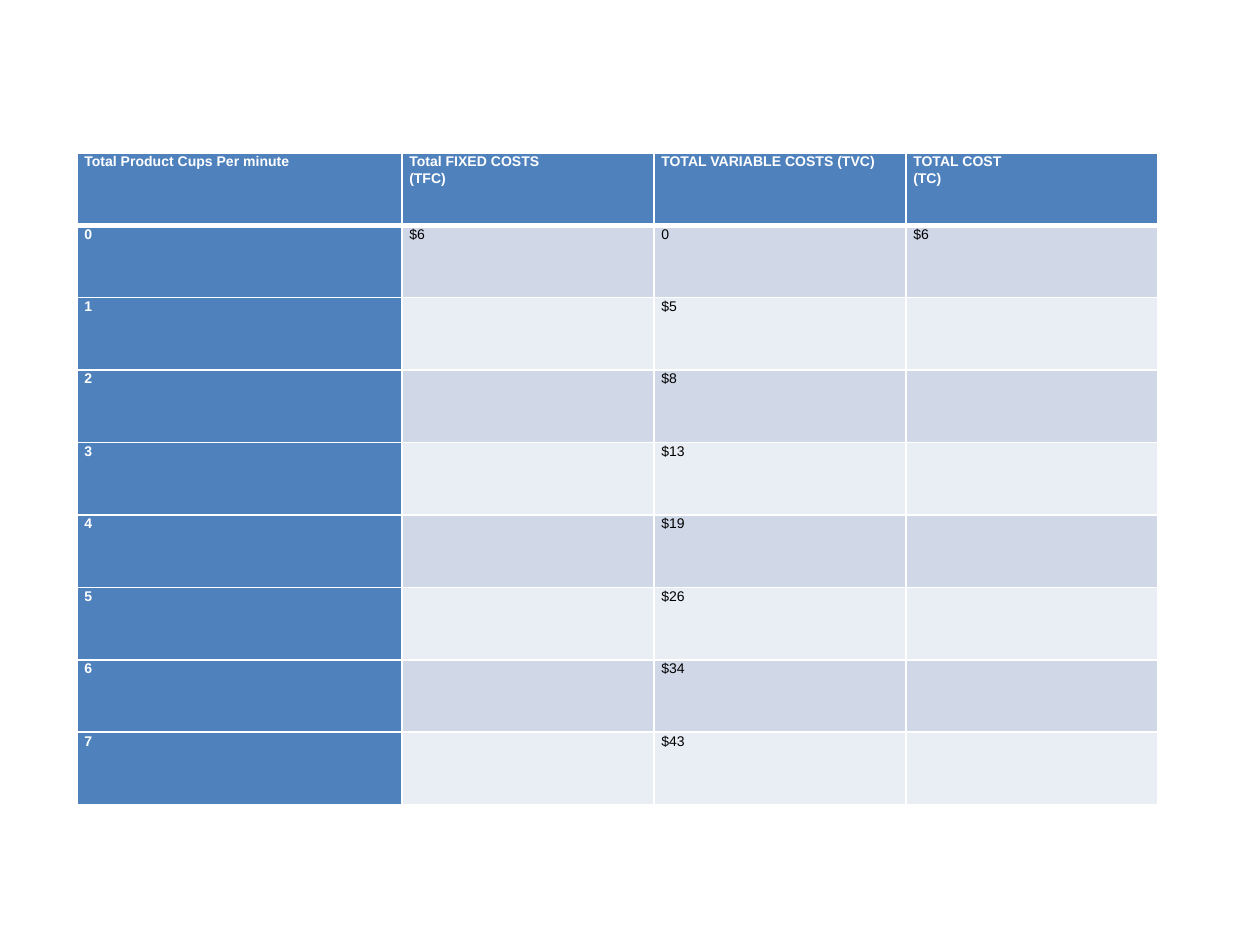
from dataclasses import dataclass

from lxml import etree
from pptx import Presentation
from pptx import util as u
from pptx.dml.color import RGBColor
from pptx.oxml import ns


@dataclass(frozen=True)
class Theme:
    font: str = "Arial"
    size: float = 8
    space: float = 1.07
    blue: str = "4F81BD"
    bands: tuple[str, str] = ("D0D8E8", "E9EDF4")
    white: str = "FFFFFF"
    black: str = "000000"
    thin: float = 1
    thick: float = 3


@dataclass(frozen=True)
class Look:
    fill: str
    ink: str
    bold: bool
    top: float
    base: float


THEME = Theme()
HEADS = ("Total Product Cups Per minute", "Total FIXED COSTS\n(TFC)",
         "TOTAL VARIABLE COSTS (TVC)", "TOTAL COST\n(TC)")
COSTS = ("0", "$5", "$8", "$13", "$19", "$26", "$34", "$43")
WIDTHS = (6.55, 5.08, 5.08, 5.08)
LEFT, TOP, HIGH = 1.55, 3.08, 1.46


def pick(row: int, col: int) -> Look:
    key = row == 0 or col == 0
    return Look(
        fill=THEME.blue if key else THEME.bands[(row - 1) % 2],
        ink=THEME.white if key else THEME.black,
        bold=key,
        top=THEME.thick if row == 1 else THEME.thin,
        base=THEME.thick if row == 0 else THEME.thin,
    )


def edge(cell, side: str, width: float) -> None:
    line = etree.SubElement(cell._tc.get_or_add_tcPr(), ns.qn(f"a:ln{side}"),
                            w=str(u.Pt(width)))
    fill = etree.SubElement(line, ns.qn("a:solidFill"))
    etree.SubElement(fill, ns.qn("a:srgbClr"), val=THEME.white)


def paint(cell, words: str, look: Look) -> None:
    sides = {"L": THEME.thin, "R": THEME.thin, "T": look.top, "B": look.base}
    for side, width in sides.items():
        edge(cell, side, width)
    cell.fill.solid()
    cell.fill.fore_color.rgb = RGBColor.from_string(look.fill)
    pads = {"margin_left": 0.15, "margin_right": 0.15,
            "margin_top": 0, "margin_bottom": 0}
    for name, pad in pads.items():
        setattr(cell, name, u.Cm(pad))
    cell.text = words
    style = {"name": THEME.font, "size": u.Pt(THEME.size), "bold": look.bold}
    for para in cell.text_frame.paragraphs:
        para.line_spacing = THEME.space
        for item in (para, *para.runs):
            for name, value in style.items():
                setattr(item.font, name, value)
            item.font.color.rgb = RGBColor.from_string(look.ink)


def main() -> None:
    deck = Presentation()
    deck.slide_width, deck.slide_height = u.Cm(25.4), u.Cm(19.05)
    slide = deck.slides.add_slide(deck.slide_layouts[6])
    body = [(str(cups), "" if cups else "$6", cost, "" if cups else "$6")
            for cups, cost in enumerate(COSTS)]
    rows = [HEADS, *body]
    grid = slide.shapes.add_table(
        len(rows), len(WIDTHS), u.Cm(LEFT), u.Cm(TOP),
        u.Cm(sum(WIDTHS)), u.Cm(HIGH * len(rows))).table
    for col, width in zip(grid.columns, WIDTHS):
        col.width = u.Cm(width)
    for r, row in enumerate(rows):
        grid.rows[r].height = u.Cm(HIGH)
        for c, words in enumerate(row):
            paint(grid.cell(r, c), words, pick(r, c))
    deck.save("out.pptx")


if __name__ == "__main__":
    main()
